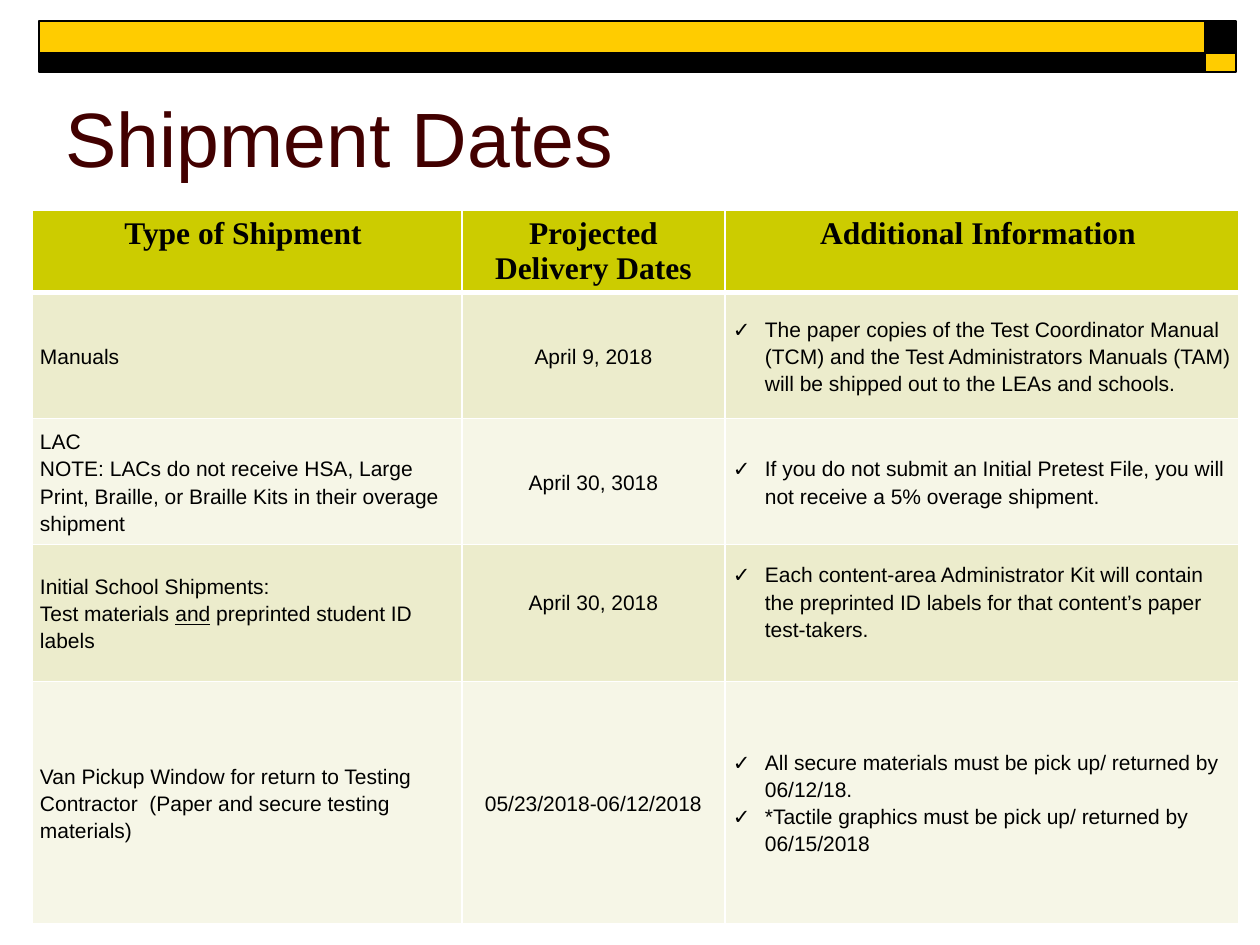
from lxml import etree
from pptx import Presentation
from pptx.dml.color import RGBColor
from pptx.enum.shapes import MSO_SHAPE
from pptx.enum.text import MSO_ANCHOR, PP_ALIGN
from pptx.oxml.ns import qn
from pptx.util import Pt

EMU_PER_PX = 914400 / 126
BLANK_LAYOUT = 6
RECTANGLE = MSO_SHAPE.RECTANGLE
TOP, MIDDLE, BOTTOM = MSO_ANCHOR.TOP, MSO_ANCHOR.MIDDLE, MSO_ANCHOR.BOTTOM
LEFT, CENTER = PP_ALIGN.LEFT, PP_ALIGN.CENTER

BLACK = RGBColor(0x00, 0x00, 0x00)
WHITE = RGBColor(0xFF, 0xFF, 0xFF)
GOLD = RGBColor(0xFF, 0xCC, 0x00)
MAROON = RGBColor(0x42, 0x00, 0x00)
OLIVE = RGBColor(0xCC, 0xCC, 0x00)
BANDS = (RGBColor(0xEC, 0xEC, 0xCC), RGBColor(0xF6, 0xF6, 0xE7))

TITLE_FONT = {"name": "Arial", "size": Pt(44)}
HEADER_FONT = {"name": "Times New Roman", "size": Pt(18), "bold": True}
BODY_FONT = {"name": "Arial", "size": Pt(12), "bold": False}

BANNER = [
    (1205, 21, 31, 32, BLACK),
    (39, 21, 1166, 32, GOLD),
    (39, 53, 1166, 19, BLACK),
    (1205, 53, 31, 19, GOLD),
]
COLUMN_WIDTHS = (430, 263, 514)
ROW_HEIGHTS = (82, 126, 126, 137, 242)
HEADERS = ("Type of Shipment ", "Projected Delivery Dates", "Additional Information ")
UNDERLINE_MARK = "_"
RAISED_ROW, RAISED_MARGIN = 3, 24
SHIPMENTS = [
    (["Manuals"], ["April 9, 2018"],
     ["The paper copies of the Test Coordinator Manual (TCM) and the Test "
      "Administrators Manuals (TAM) will be shipped out to the LEAs and schools."]),
    (["LAC",
      "NOTE: LACs do not receive HSA, Large Print, Braille, or Braille Kits in "
      "their overage shipment"],
     ["April 30, 3018"],
     ["If you do not submit an Initial Pretest File, you will not receive a 5% "
      "overage shipment."]),
    (["Initial School Shipments:",
      "Test materials _and_ preprinted student ID labels"],
     ["April 30, 2018"],
     ["Each content-area Administrator Kit will contain the preprinted ID labels "
      "for that content’s paper test-takers."]),
    (["Van Pickup Window for return to Testing Contractor  (Paper and secure "
      "testing materials)"],
     ["05/23/2018-06/12/2018"],
     ["All secure materials must be pick up/ returned by 06/12/18.",
      "*Tactile graphics must be pick up/ returned by 06/15/2018"]),
]


def px(length):
    """Turn whole pixels into EMU."""
    return round(length * EMU_PER_PX)


def apply_format(target, values):
    """Set each named attribute on the target."""
    for attribute, value in values.items():
        setattr(target, attribute, value)


def add_banner_block(slide, left, top, width, height, color):
    """Draw one rectangle of the top banner."""
    block = slide.shapes.add_shape(RECTANGLE, px(left), px(top), px(width), px(height))
    block.shadow.inherit = False
    block.fill.solid()
    block.fill.fore_color.rgb = color
    block.line.color.rgb = BLACK
    block.line.width = Pt(1)


def add_title(slide, wording):
    """Place the slide title above the table."""
    title = slide.shapes.add_textbox(px(53), px(32), px(1102), px(157))
    apply_format(title.text_frame, {"word_wrap": True, "vertical_anchor": BOTTOM})
    write_paragraph(title.text_frame.paragraphs[0], wording, TITLE_FONT, MAROON)


def add_check_bullet(paragraph):
    """Give a paragraph a hanging check mark."""
    properties = paragraph._p.get_or_add_pPr()
    properties.set("marL", str(px(32)))
    properties.set("indent", str(px(-32)))
    etree.SubElement(properties, qn("a:buFont"), typeface="Arial")
    etree.SubElement(properties, qn("a:buChar"), char="✓")


def write_paragraph(paragraph, wording, font, color, align=LEFT):
    """Write wording, underlining the parts between marks."""
    paragraph.alignment = align
    for position, part in enumerate(wording.split(UNDERLINE_MARK)):
        run = paragraph.add_run()
        run.text = part
        apply_format(run.font, font)
        run.font.color.rgb = color
        if position % 2:
            run.font.underline = True


def style_cell(cell, color, bottom_width):
    """Give a cell white borders and a solid fill."""
    properties = cell._tc.get_or_add_tcPr()
    for side, width in (("L", 1), ("R", 1), ("T", 1), ("B", bottom_width)):
        border = etree.SubElement(properties, qn(f"a:ln{side}"), w=str(Pt(width)))
        fill = etree.SubElement(border, qn("a:solidFill"))
        etree.SubElement(fill, qn("a:srgbClr"), val=str(WHITE))
    cell.fill.solid()
    cell.fill.fore_color.rgb = color


def fill_header(cell, wording):
    """Write one column heading."""
    style_cell(cell, OLIVE, 3)
    cell.vertical_anchor = TOP
    write_paragraph(cell.text_frame.paragraphs[0], wording, HEADER_FONT, BLACK, CENTER)


def fill_body(cell, lines, band, align, checked, bottom_margin):
    """Write the paragraphs of one body cell."""
    style_cell(cell, band, 1)
    apply_format(cell, {
        "vertical_anchor": MIDDLE, "margin_left": px(8), "margin_right": px(8),
        "margin_top": 0, "margin_bottom": px(bottom_margin),
    })
    frame = cell.text_frame
    for index, wording in enumerate(lines):
        paragraph = frame.add_paragraph() if index else frame.paragraphs[0]
        if checked:
            add_check_bullet(paragraph)
        paragraph.line_spacing = 1.15
        write_paragraph(paragraph, wording, BODY_FONT, BLACK, align)


def add_shipment_table(slide):
    """Build the table of shipments and dates."""
    table = slide.shapes.add_table(
        len(ROW_HEIGHTS), len(COLUMN_WIDTHS), px(32), px(210),
        px(sum(COLUMN_WIDTHS)), px(sum(ROW_HEIGHTS))).table
    apply_format(table, {"first_row": False, "horz_banding": False})
    for column, width in zip(table.columns, COLUMN_WIDTHS):
        column.width = px(width)
    for row, height in zip(table.rows, ROW_HEIGHTS):
        row.height = px(height)
    for column, wording in enumerate(HEADERS):
        fill_header(table.cell(0, column), wording)
    for row, shipment in enumerate(SHIPMENTS, start=1):
        band = BANDS[(row - 1) % 2]
        for column, lines in enumerate(shipment):
            raised = row == RAISED_ROW and column > 0
            fill_body(table.cell(row, column), lines, band,
                      CENTER if column == 1 else LEFT, column == 2,
                      RAISED_MARGIN if raised else 0)


def main():
    """Build and save the shipment dates slide."""
    presentation = Presentation()
    apply_format(presentation, {"slide_width": px(1260), "slide_height": px(945)})
    slide = presentation.slides.add_slide(presentation.slide_layouts[BLANK_LAYOUT])
    for block in BANNER:
        add_banner_block(slide, *block)
    add_shipment_table(slide)
    add_title(slide, "Shipment Dates")
    presentation.save("out.pptx")


if __name__ == "__main__":
    main()
